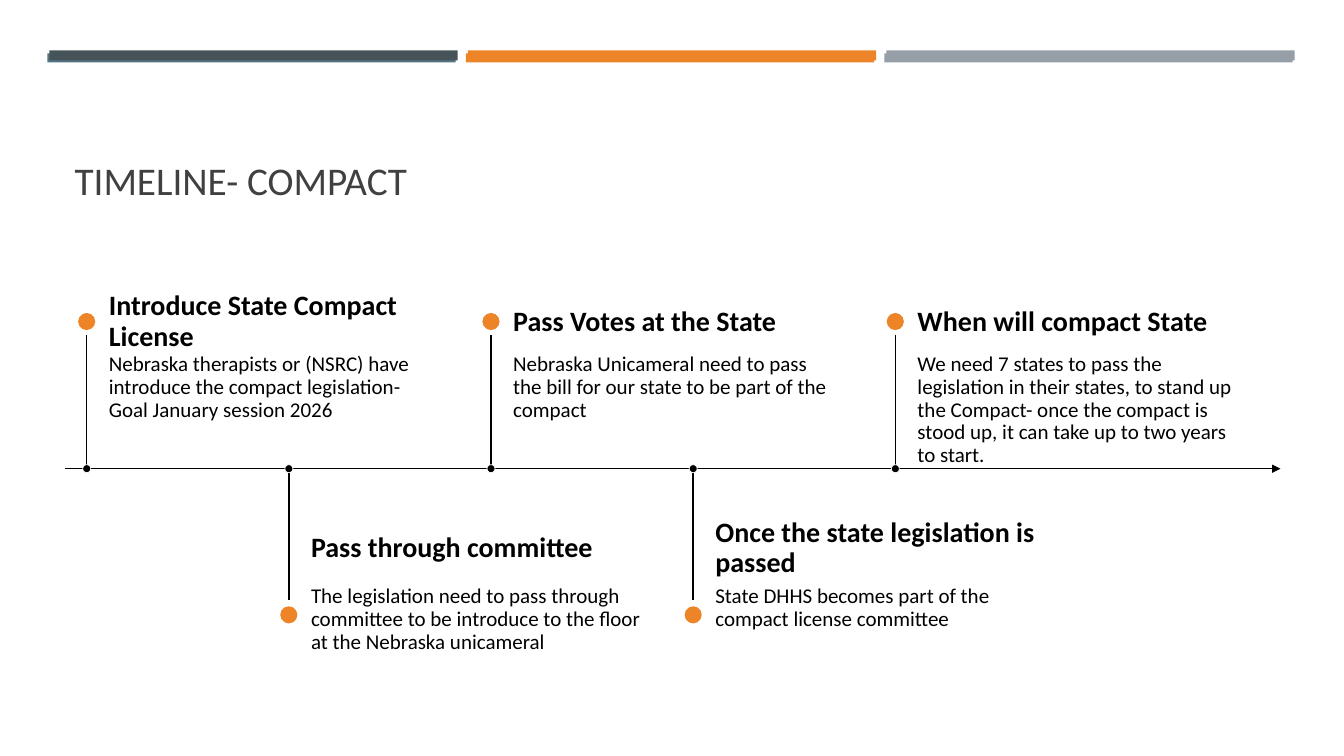
from pptx import Presentation
from pptx.dml.color import RGBColor
from pptx.enum.shapes import MSO_CONNECTOR, MSO_SHAPE
from pptx.enum.text import MSO_ANCHOR, PP_ALIGN
from pptx.oxml.ns import qn
from pptx.util import Inches, Pt
from lxml.etree import SubElement

FONT = "Calibri"
ORANGE, GREY, BLACK = "ED8428", "969FA7", "000000"
AXIS_LEFT, AXIS_Y, AXIS_WIDTH = 0.64, 4.65, 12.06
FIRST_STOP, LAST_STOP = 0.86, 8.88
LABEL_WIDTH, LABEL_GAP = 3.34, 0.22
BAR_WIDTH, BAR_PITCH = 4.05, 4.15

# Rows above and below the axis: marker centre, line end, heading and detail boxes
ABOVE = {"marker": 3.19, "stem": 3.32, "heading": (2.98, 0.43),
         "detail": (3.41, 1.23), "insets": (0, 0.1, 0.1, 0.16)}
BELOW = {"marker": 6.1, "stem": 5.95, "heading": (5.23, 0.42),
         "detail": (5.65, 0.67), "insets": (0, 0.16, 0, 0.1)}

STEPS = [
    ("Introduce State Compact License",
     "Nebraska therapists or (NSRC) have introduce the compact legislation- "
     "Goal January session 2026"),
    ("Pass through committee",
     "The legislation need to pass through committee to be introduce to the "
     "floor at the Nebraska unicameral"),
    ("Pass Votes at the State",
     "Nebraska Unicameral need to pass the bill for our state to be part of "
     "the compact"),
    ("Once the state legislation is passed",
     "State DHHS becomes part of the compact license committee"),
    ("When will compact State",
     "We need 7 states to pass the legislation in their states, to stand up "
     "the Compact- once the compact is stood up, it can take up to two years "
     "to start."),
]


def color(hex_value):
    return RGBColor.from_string(hex_value)


def add_filled(page, preset, left, top, width, height, fill):
    shape = page.shapes.add_shape(
        preset, Inches(left), Inches(top), Inches(width), Inches(height))
    shape.shadow.inherit = False
    shape.fill.solid()
    shape.fill.fore_color.rgb = color(fill)
    shape.line.fill.background()
    return shape


def add_dot(page, x, y, size, fill):
    """Add a circle centred on x, y."""
    return add_filled(page, MSO_SHAPE.OVAL, x - size / 2, y - size / 2,
                      size, size, fill)


def add_line(page, x1, y1, x2, y2, arrow=False):
    line = page.shapes.add_connector(
        MSO_CONNECTOR.STRAIGHT, Inches(x1), Inches(y1), Inches(x2), Inches(y2))
    line.line.color.rgb = color(BLACK)
    line.line.width = Pt(1)
    if arrow:
        SubElement(line.line._get_or_add_ln(), qn("a:tailEnd"), type="triangle")
    SubElement(line._element.spPr, qn("a:effectLst"))


def style_text(paragraph, size, hex_value, bold=False):
    paragraph.alignment = PP_ALIGN.LEFT
    paragraph.line_spacing = 0.9
    paragraph.font.name = FONT
    paragraph.font.size = Pt(size)
    paragraph.font.bold = bold
    paragraph.font.color.rgb = color(hex_value)


def add_label(page, left, row, text, size, insets, anchor, bold=False):
    top, height = row
    box = page.shapes.add_textbox(
        Inches(left), Inches(top), Inches(LABEL_WIDTH), Inches(height))
    frame = box.text_frame
    frame.word_wrap = True
    frame.vertical_anchor = anchor
    (frame.margin_left, frame.margin_top,
     frame.margin_right, frame.margin_bottom) = map(Inches, insets)
    frame.text = text
    style_text(frame.paragraphs[0], size, BLACK, bold)


def add_bars(page, left, top, height, fills):
    for column, fill in enumerate(fills):
        add_filled(page, MSO_SHAPE.RECTANGLE, left + column * BAR_PITCH, top,
                   BAR_WIDTH, height, fill)


def add_title(page, text):
    title = page.shapes.title
    title.left, title.top = Inches(AXIS_LEFT), Inches(0.77)
    title.width, title.height = Inches(AXIS_WIDTH), Inches(1.3)
    title.text_frame.text = text
    title.text_frame.vertical_anchor = MSO_ANCHOR.BOTTOM
    style_text(title.text_frame.paragraphs[0], 28, "404040")


def add_step(page, x, side, heading, detail):
    add_dot(page, x, side["marker"], 0.17, ORANGE)
    left = x + LABEL_GAP
    add_label(page, left, side["detail"], detail, 15, side["insets"],
              MSO_ANCHOR.TOP)
    add_label(page, left, side["heading"], heading, 20, (0, 0, 0.14, 0),
              MSO_ANCHOR.MIDDLE, bold=True)
    add_line(page, x, side["stem"], x, AXIS_Y)
    joint = add_dot(page, x, AXIS_Y, 0.08, BLACK)
    joint.line.color.rgb = color("FFFFFF")
    joint.line.width = Pt(0.5)


def main():
    deck = Presentation()
    deck.slide_width, deck.slide_height = Inches(13.33), Inches(7.5)
    page = deck.slides.add_slide(deck.slide_layouts[5])

    add_bars(page, 0.47, 0.53, 0.09, ("537685", ORANGE, GREY))
    add_bars(page, 0.49, 0.5, 0.1, ("465359", ORANGE, GREY))
    add_title(page, "TIMELINE- COMPACT")

    add_line(page, AXIS_LEFT, AXIS_Y, AXIS_LEFT + AXIS_WIDTH, AXIS_Y, arrow=True)
    pitch = (LAST_STOP - FIRST_STOP) / (len(STEPS) - 1)
    for index, (heading, detail) in enumerate(STEPS):
        side = BELOW if index % 2 else ABOVE
        add_step(page, FIRST_STOP + index * pitch, side, heading, detail)

    deck.save("out.pptx")


if __name__ == "__main__":
    main()
